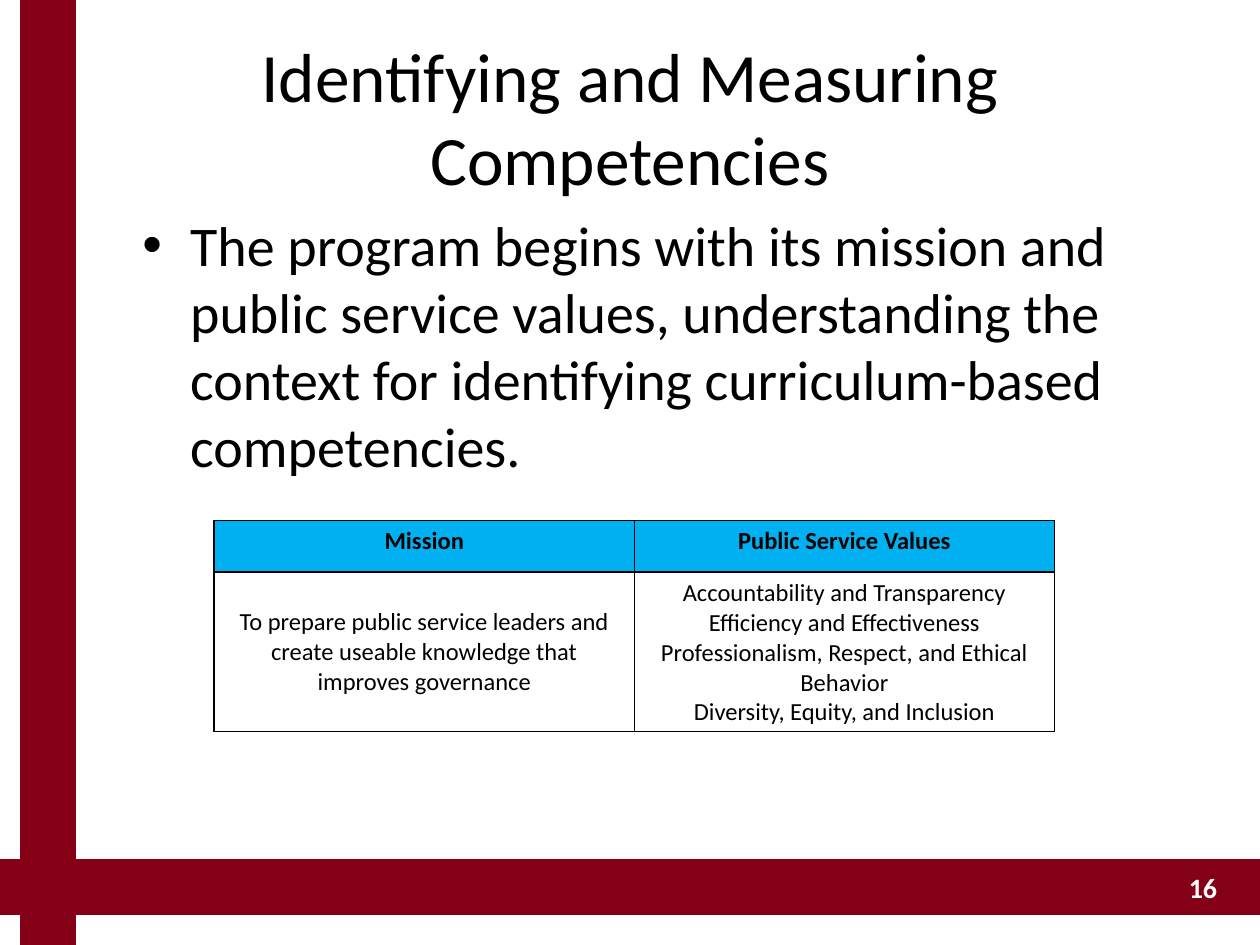
from dataclasses import dataclass

import pptx
import pptx.dml.color
import pptx.enum.shapes
import pptx.enum.text
import pptx.oxml
import pptx.oxml.ns
import pptx.util

Inches = pptx.util.Inches
Pt = pptx.util.Pt
ALIGN = pptx.enum.text.PP_ALIGN
ANCHOR = pptx.enum.text.MSO_ANCHOR

COLORS = {"maroon": "840017", "black": "000000", "white": "FFFFFF", "header": "00B0F0"}
FONT = "Calibri"


@dataclass
class Box:
    left: float
    top: float
    width: float
    height: float

    def emu(self) -> list:
        return [Inches(v) for v in (self.left, self.top, self.width, self.height)]


@dataclass
class Cell:
    lines: list[str]
    header: bool = False


BARS = [Box(0, 6.83, 10, 0.42), Box(0.17, 0, 0.42, 7.5)]
TABLE_BOX = Box(1.7, 4.13, 6.67, 1.63)
ROW_HEIGHTS = [0.41, 1.22]
COLUMN_WIDTH = TABLE_BOX.width / 2
CELLS = [
    [Cell(["Mission"], header=True), Cell(["Public Service Values"], header=True)],
    [
        Cell(["To prepare public service leaders and create useable knowledge "
              "that improves governance"]),
        Cell(["Accountability and Transparency",
              "Efficiency and Effectiveness",
              "Professionalism, Respect, and Ethical Behavior",
              "Diversity, Equity, and Inclusion"]),
    ],
]


def rgb(name: str):
    return pptx.dml.color.RGBColor.from_string(COLORS[name])


def xml_element(content: str):
    tag, rest = content.split(" ", 1)
    return pptx.oxml.parse_xml(f"<a:{tag} {pptx.oxml.ns.nsdecls('a')} {rest}")


def write_text(frame, lines: list[str], *, size: float, color: str = "black",
               bold: bool = False, align=ALIGN.LEFT, bullet: bool = False) -> None:
    for index, line in enumerate(lines):
        paragraph = frame.paragraphs[0] if index == 0 else frame.add_paragraph()
        paragraph.alignment = align
        if bullet:
            properties = paragraph._p.get_or_add_pPr()
            properties.set("marL", str(Inches(0.38)))
            properties.set("indent", str(Inches(-0.38)))
            properties.append(xml_element('buFont typeface="Arial"/>'))
            properties.append(xml_element('buChar char="•"/>'))
        run = paragraph.add_run()
        run.text = line
        run.font.name = FONT
        run.font.size = Pt(size)
        run.font.bold = bold
        run.font.color.rgb = rgb(color)


def add_text(slide, box: Box, text: str, *, anchor=ANCHOR.TOP, wrap: bool = True,
             **text_format) -> None:
    frame = slide.shapes.add_textbox(*box.emu()).text_frame
    frame.word_wrap = wrap
    frame.vertical_anchor = anchor
    frame.margin_left = frame.margin_right = Inches(0.05)
    frame.margin_top = frame.margin_bottom = Inches(0.05)
    write_text(frame, [text], **text_format)


def add_bar(slide, box: Box) -> None:
    bar = slide.shapes.add_shape(pptx.enum.shapes.MSO_SHAPE.RECTANGLE, *box.emu())
    bar.shadow.inherit = False
    bar.fill.solid()
    bar.fill.fore_color.rgb = rgb("maroon")
    bar.line.color.rgb = rgb("maroon")
    bar.line.width = Pt(2)


def add_borders(cell) -> None:
    properties = cell._tc.get_or_add_tcPr()
    for side in ("lnL", "lnR", "lnT", "lnB"):
        properties.append(xml_element(
            f'{side} w="{Pt(1)}"><a:solidFill><a:srgbClr val="{COLORS["black"]}"/>'
            f"</a:solidFill></a:{side}>"))


def add_values_table(slide) -> None:
    table = slide.shapes.add_table(len(CELLS), len(CELLS[0]), *TABLE_BOX.emu()).table
    table.first_row = table.horz_banding = False
    for column in table.columns:
        column.width = Inches(COLUMN_WIDTH)
    for r, (height, row) in enumerate(zip(ROW_HEIGHTS, CELLS)):
        table.rows[r].height = Inches(height)
        for c, content in enumerate(row):
            cell = table.cell(r, c)
            add_borders(cell)
            if content.header:
                cell.fill.solid()
                cell.fill.fore_color.rgb = rgb("header")
            else:
                cell.fill.background()
            cell.vertical_anchor = ANCHOR.TOP if content.header else ANCHOR.MIDDLE
            write_text(cell.text_frame, content.lines, size=14,
                       bold=content.header, align=ALIGN.CENTER)


def main() -> None:
    deck = pptx.Presentation()
    deck.slide_width, deck.slide_height = Inches(10), Inches(7.5)
    slide = deck.slides.add_slide(deck.slide_layouts[6])

    for bar in BARS:
        add_bar(slide, bar)
    add_text(slide, Box(0.5, 0.3, 9, 1.25), "Identifying and Measuring Competencies",
             size=39.6, align=ALIGN.CENTER, anchor=ANCHOR.MIDDLE)
    add_text(slide, Box(1.08, 1.62, 8.24, 5.08),
             "The program begins with its mission and public service values, "
             "understanding the context for identifying curriculum-based competencies.",
             size=32, bullet=True)
    add_values_table(slide)
    add_text(slide, Box(9.35, 6.86, 0.36, 0.37), "16", size=16, color="white", bold=True,
             align=ALIGN.RIGHT, anchor=ANCHOR.MIDDLE, wrap=False)

    deck.save("out.pptx")


if __name__ == "__main__":
    main()
